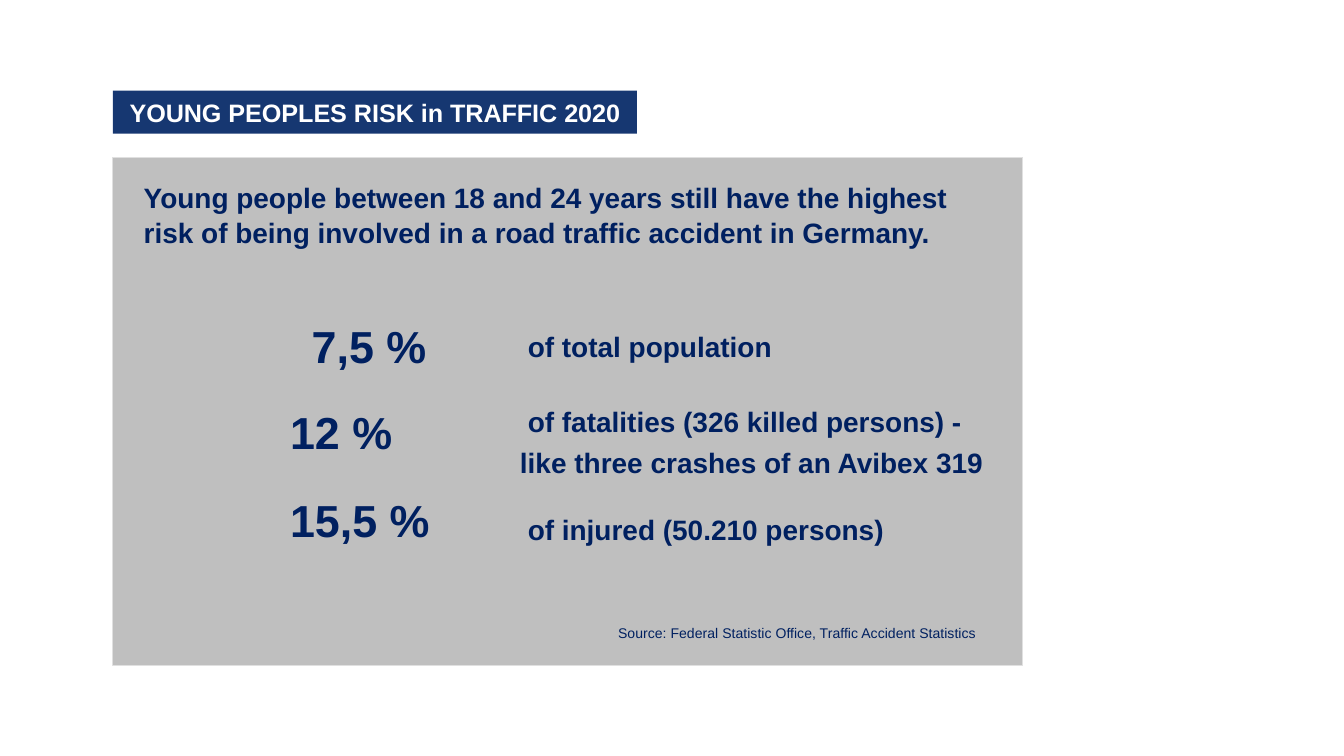
from pptx import Presentation
from pptx.dml.color import RGBColor
from pptx.enum.shapes import MSO_SHAPE
from pptx.enum.text import MSO_ANCHOR
from pptx.util import Pt

COLORS = {
    "panel": "BFBFBF",
    "panel_edge": "E0E0E0",
    "banner": "163771",
    "navy": "002060",
    "white": "FFFFFF",
}
FONT = "Arial"
SPACE_WIDTH = 4.17  # indent of the labels

# Share, share offset from its column, label top, label lines with indents
FACTS = [
    ("7,5 %", 11.6, 82.8, 87.8, [("of total population", SPACE_WIDTH)]),
    ("12 %", 0, 128.9, 128.2, [
        ("of fatalities (326 killed persons) -", SPACE_WIDTH),
        ("like three crashes of an Avibex 319", 0),
    ]),
    ("15,5 %", 0, 176.4, 185.8, [("of injured (50.210 persons)", SPACE_WIDTH)]),
]


def add_paragraph(paragraph, text, size=15, color="navy", bold=True,
                  indent=0, before=0, spacing=None):
    if indent:
        paragraph._p.get_or_add_pPr().set("marL", str(Pt(indent)))
    paragraph.space_before = Pt(before)
    if spacing:
        paragraph.line_spacing = spacing
    run = paragraph.add_run()
    run.text = text
    run.font.name = FONT
    run.font.size = Pt(size)
    run.font.bold = bold
    run.font.color.rgb = RGBColor.from_string(COLORS[color])


def add_text(slide, box, lines, wrap=True, **style):
    """Place (text, indent) lines in a text box."""
    frame = slide.shapes.add_textbox(*map(Pt, box)).text_frame
    frame.word_wrap = wrap
    for number, (text, indent) in enumerate(lines):
        paragraph = frame.add_paragraph() if number else frame.paragraphs[0]
        add_paragraph(paragraph, text, indent=indent,
                      before=3 if number else 0, **style)


def add_block(slide, box, fill, edge=None):
    block = slide.shapes.add_shape(MSO_SHAPE.RECTANGLE, *map(Pt, box))
    block.shadow.inherit = False
    block.fill.solid()
    block.fill.fore_color.rgb = RGBColor.from_string(COLORS[fill])
    if edge:
        block.line.color.rgb = RGBColor.from_string(COLORS[edge])
        block.line.width = Pt(0.5)
    else:
        block.line.fill.background()
    return block


def add_banner(slide, box):
    frame = add_block(slide, box, "banner").text_frame
    frame.word_wrap = False
    frame.vertical_anchor = MSO_ANCHOR.BOTTOM
    frame.margin_top, frame.margin_bottom = Pt(5.8), Pt(2.9)
    add_paragraph(frame.paragraphs[0], "YOUNG PEOPLES RISK in TRAFFIC 2020",
                  size=13.5, color="white", spacing=0.9)


def add_risk_panel(slide, box):
    left, top, _, _ = box
    add_block(slide, box, "panel", "panel_edge")

    # Introduction
    intro = ("Young people between 18 and 24 years still have the highest "
             "risk of being involved in a road traffic accident in Germany.")
    add_text(slide, (left + 9.4, top + 7.9, 445, 40.3), [(intro, 0)],
             spacing=1.05)

    # Shares and what they are part of
    for share, shift, share_top, label_top, label in FACTS:
        add_text(slide, (left + 87.8 + shift, top + share_top, 90, 36),
                 [(share, 0)], wrap=False, size=24)
        add_text(slide, (left + 211, top + label_top, 263, 8 + 17 * len(label)),
                 label, spacing=1.05)

    # Source line
    source = "Source: Federal Statistic Office, Traffic Accident Statistics"
    add_text(slide, (left + 263.5, top + 247, 209.5, 25.2), [(source, 0)],
             wrap=False, size=7.5, bold=False)


def main():
    presentation = Presentation()
    presentation.slide_width, presentation.slide_height = Pt(720), Pt(405)
    slide = presentation.slides.add_slide(presentation.slide_layouts[6])
    add_risk_panel(slide, (60.5, 84.2, 487.4, 272.2))
    add_banner(slide, (60.5, 48.6, 280.8, 23))
    presentation.save("out.pptx")


if __name__ == "__main__":
    main()
